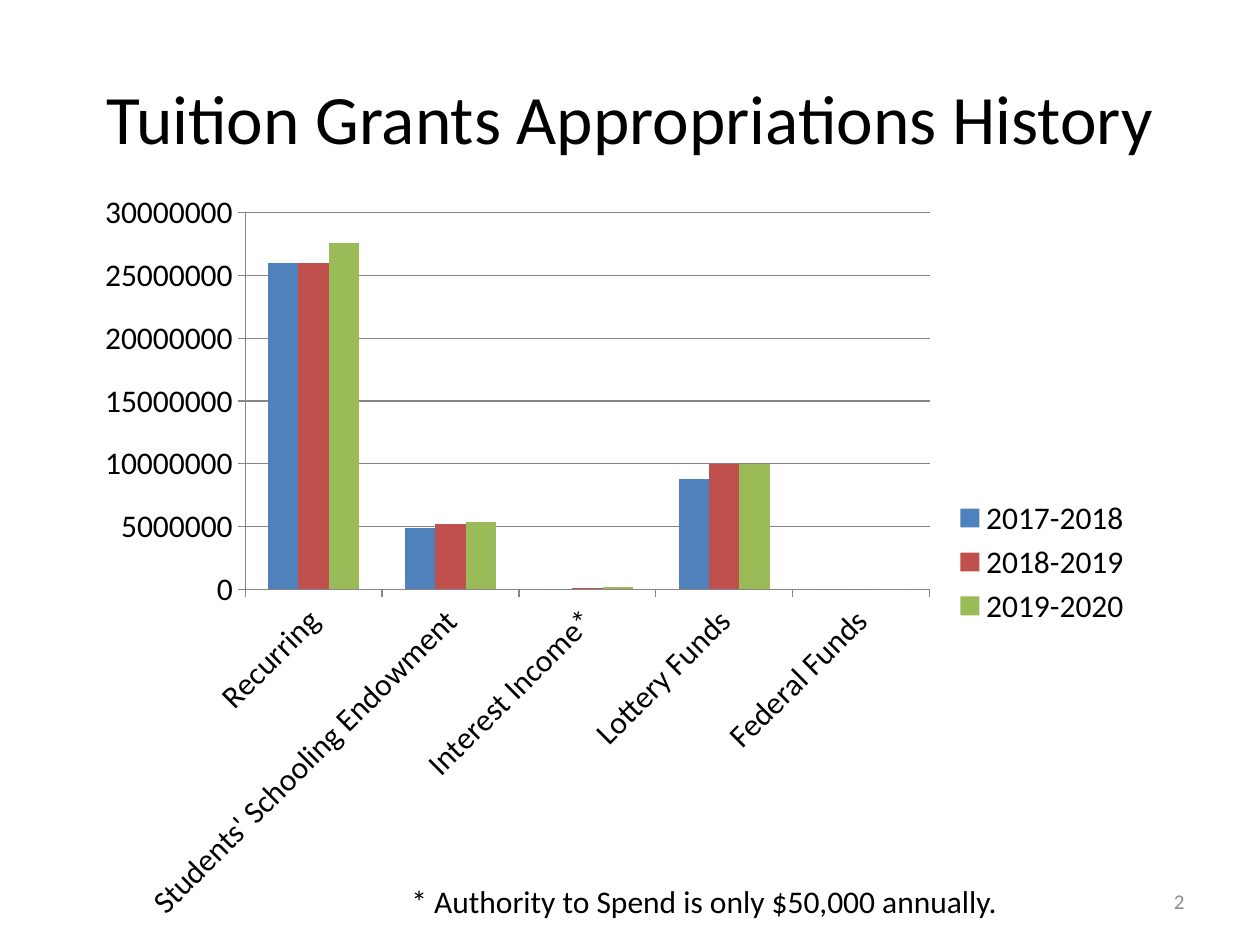
from lxml import etree
from pptx import Presentation
from pptx import util as u
from pptx.chart.data import CategoryChartData
from pptx.dml.color import RGBColor
from pptx.enum import chart as charts, text
from pptx.oxml.ns import qn

PX = 914400 / 126
FONT = "Calibri"
YEARS = {
    "2017-2018": ("4F81BD", [26000000, 4900000, 0, 8800000, 0]),
    "2018-2019": ("C0504D", [26000000, 5200000, 100000, 10000000, 0]),
    "2019-2020": ("9BBB59", [27600000, 5400000, 200000, 10000000, 0]),
}
SOURCES = ["Recurring", "Students' Schooling Endowment",
           "Interest Income*", "Lottery Funds", "Federal Funds"]


def color(value):
    return RGBColor.from_string(value)


def emu(box):
    return [u.Emu(round(length * PX)) for length in box]


def set_font(font, size, value="000000"):
    font.name, font.size = FONT, u.Pt(size)
    font.color.rgb = color(value)


def write(shape, words, size, align, anchor, value="000000"):
    frame = shape.text_frame
    frame.word_wrap = True
    frame.auto_size = text.MSO_AUTO_SIZE.NONE
    frame.vertical_anchor = anchor
    para = frame.paragraphs[0]
    para.alignment = align
    span = para.add_run()
    span.text = words
    set_font(span.font, size, value)


def add_title(page, box, words):
    title = page.shapes.title
    title.left, title.top, title.width, title.height = emu(box)
    write(title, words, 39.6, text.PP_ALIGN.CENTER, text.MSO_ANCHOR.MIDDLE)


def add_label(page, box, *style):
    write(page.shapes.add_textbox(*emu(box)), *style)


def set_layout(parent, after, box, outer, inner=False):
    """Place a chart part at a px box, as fractions of the chart."""
    for old in parent.findall(qn("c:layout")):
        parent.remove(old)
    layout = etree.Element(qn("c:layout"))
    manual = etree.SubElement(layout, qn("c:manualLayout"))
    if inner:
        etree.SubElement(manual, qn("c:layoutTarget")).set("val", "inner")
    for name in ("xMode", "yMode"):
        etree.SubElement(manual, qn("c:" + name)).set("val", "edge")
    for name, length, whole in zip("xywh", box, outer[2:] * 2):
        etree.SubElement(manual, qn("c:" + name)).set("val", f"{length / whole:.3f}")
    if after is None:
        parent.insert(0, layout)
    else:
        after.addnext(layout)


def add_history_chart(page, box):
    data = CategoryChartData()
    data.categories = SOURCES
    for year, (_, amounts) in YEARS.items():
        data.add_series(year, amounts)
    chart = page.shapes.add_chart(
        charts.XL_CHART_TYPE.COLUMN_CLUSTERED, *emu(box), data).chart
    chart.has_title = False
    set_font(chart.font, 18)

    # Columns
    plot = chart.plots[0]
    plot.gap_width, plot.overlap, plot.vary_by_categories = 150, 0, False
    for series, (fill, _) in zip(plot.series, YEARS.values()):
        series.format.fill.solid()
        series.format.fill.fore_color.rgb = color(fill)

    # Axes
    amounts, sources = chart.value_axis, chart.category_axis
    amounts.minimum_scale, amounts.maximum_scale = 0, 30000000
    amounts.major_unit = 5000000
    amounts.has_major_gridlines = True
    amounts.tick_labels.number_format = "General"
    amounts.tick_labels.number_format_is_linked = False
    for axis in (amounts, sources):
        axis.major_tick_mark = charts.XL_TICK_MARK.OUTSIDE
        set_font(axis.tick_labels.font, 18)
    for part in (amounts, sources, amounts.major_gridlines):
        part.format.line.color.rgb = color("868686")
        part.format.line.width = u.Pt(0.75)
    slant = sources._element.find(qn("c:txPr")).find(qn("a:bodyPr"))
    slant.set("rot", "-2700000")
    slant.set("vert", "horz")

    # Legend
    chart.has_legend = True
    legend = chart.legend
    legend.position = charts.XL_LEGEND_POSITION.RIGHT
    legend.include_in_layout = False
    set_font(legend.font, 18)

    # Plot and legend positions
    area = chart._chartSpace.chart.plotArea
    set_layout(area, None, (161, 34, 684, 377), box, inner=True)
    key = legend._element
    set_layout(key, key.find(qn("c:legendPos")), (865, 314, 187, 138), box)


def build():
    deck = Presentation()
    deck.slide_width, deck.slide_height = u.Inches(10), u.Inches(7.5)
    page = deck.slides.add_slide(deck.slide_layouts[5])
    add_title(page, (63, 38, 1134, 158), "Tuition Grants Appropriations History")
    add_label(page, (903, 876, 294, 50), "2", 12, text.PP_ALIGN.RIGHT,
              text.MSO_ANCHOR.MIDDLE, "8C8C8C")
    add_history_chart(page, (84, 179, 1061, 766))
    add_label(page, (399, 876, 683, 50),
              "* Authority to Spend is only $50,000 annually.", 18,
              text.PP_ALIGN.LEFT, text.MSO_ANCHOR.TOP)
    deck.save("out.pptx")


if __name__ == "__main__":
    build()
